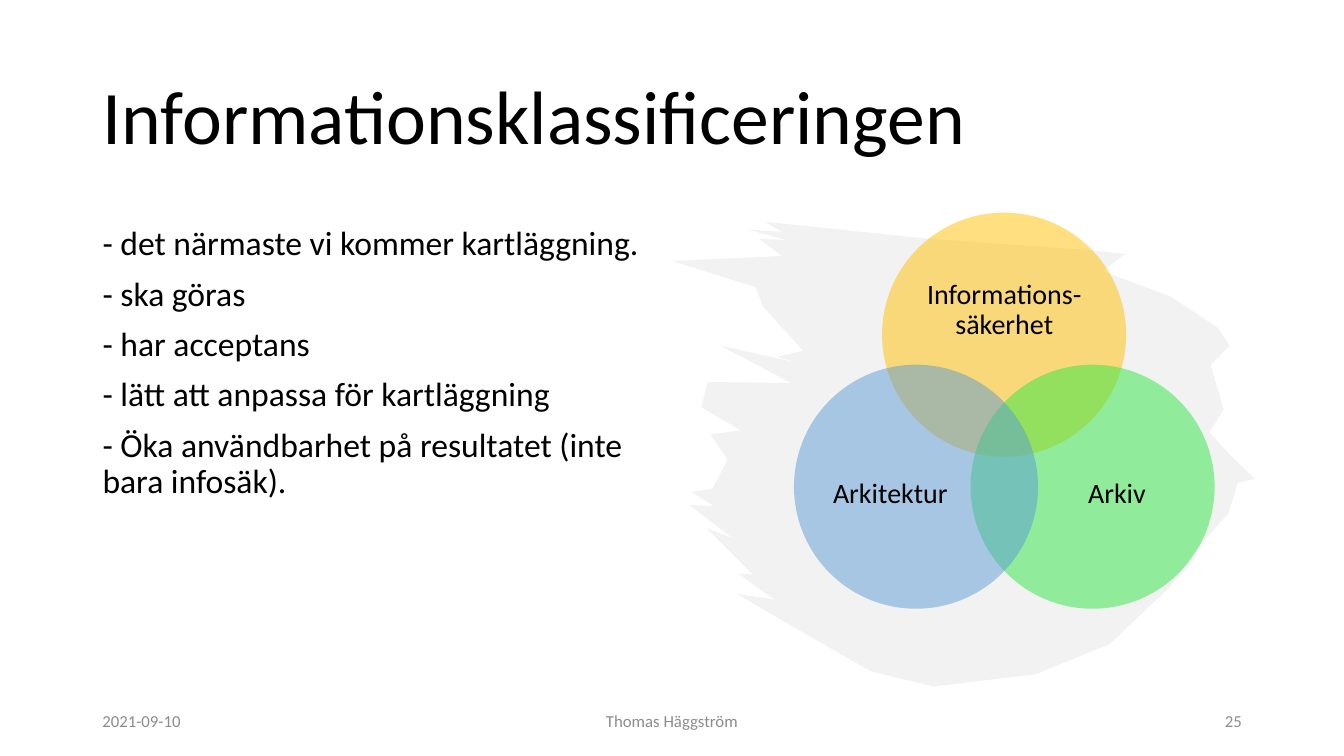
from dataclasses import dataclass

import lxml.etree
import pptx
import pptx.dml.color
import pptx.enum.shapes
import pptx.enum.text
import pptx.oxml.ns
import pptx.shapes.autoshape
import pptx.slide
import pptx.text.text
import pptx.util

Cm = pptx.util.Cm
Pt = pptx.util.Pt
RGBColor = pptx.dml.color.RGBColor
Align = pptx.enum.text.PP_ALIGN
qn = pptx.oxml.ns.qn

FONT = "Calibri"
BLACK = RGBColor(0x00, 0x00, 0x00)
FOOTER_GRAY = RGBColor(0x8C, 0x8C, 0x8C)
BRUSH_GRAY = RGBColor(0xE7, 0xE6, 0xE6)
YELLOW = RGBColor(0xFF, 0xC0, 0x00)
GREEN = RGBColor(0x30, 0xE8, 0x45)
BLUE = RGBColor(0x5B, 0x9B, 0xD5)

MARGIN_LEFT = 2.33
CIRCLE_SIZE = 6.15
FOOTER_TOP, FOOTER_HEIGHT = 17.65, 1.02


@dataclass
class Box:
    """A rectangle in centimetres."""
    left: float
    top: float
    width: float
    height: float

    def lengths(self) -> tuple[int, int, int, int]:
        return Cm(self.left), Cm(self.top), Cm(self.width), Cm(self.height)


@dataclass
class Circle:
    left: float
    top: float
    color: RGBColor
    label: str
    label_box: Box


@dataclass
class Footer:
    text: str
    left: float
    width: float
    alignment: Align


TITLE = "Informationsklassificeringen"
TITLE_BOX = Box(MARGIN_LEFT, 1.19, 29.21, 3.68)
POINTS = (
    "- det närmaste vi kommer kartläggning.",
    "- ska göras",
    "- har acceptans",
    "- lätt att anpassa för kartläggning",
    "- Öka användbarhet på resultatet (inte bara infosäk).",
)
POINTS_BOX = Box(MARGIN_LEFT, 5.59, 14.68, 11.56)

CIRCLES = (
    Circle(22.23, 5.36, YELLOW, "Informations-säkerhet", Box(23.06, 6.43, 4.5, 2.77)),
    Circle(24.46, 9.19, GREEN, "Arkiv", Box(26.31, 10.77, 3.68, 3.38)),
    Circle(20.01, 9.19, BLUE, "Arkitektur", Box(20.6, 10.77, 3.68, 3.38)),
)
FOOTERS = (
    Footer("2021-09-10", MARGIN_LEFT, 7.62, Align.LEFT),
    Footer("Thomas Häggström", 11.22, 11.43, Align.CENTER),
    Footer("25", 23.93, 7.62, Align.RIGHT),
)

# Outline of the brush stroke, clockwise, in hundredths of 2.54 cm
BRUSH_UNIT = Cm(2.54) / 100
BRUSH_OUTLINE = (
    (759, 220), (922, 237), (1080, 248), (1116, 252), (1094, 269), (1161, 294),
    (1208, 325), (1220, 343), (1201, 362), (1214, 406), (1200, 429), (1221, 452),
    (1245, 475), (1228, 479), (1219, 509), (1187, 545), (1161, 582), (1101, 639),
    (1027, 669), (926, 681), (864, 666), (763, 608), (731, 589), (769, 595),
    (732, 569), (747, 570), (701, 524), (727, 534), (684, 501), (708, 502),
    (686, 488), (707, 485), (722, 456), (705, 431), (735, 427), (696, 404),
    (702, 379), (785, 380), (715, 343), (796, 361), (771, 354), (797, 348),
    (757, 304), (750, 285), (667, 259), (776, 254), (753, 237), (780, 238),
    (743, 228), (776, 230),
)


def add_run(paragraph: pptx.text.text._Paragraph, text: str, size: int,
            color: RGBColor = BLACK) -> None:
    run = paragraph.add_run()
    run.text = text
    run.font.name = FONT
    run.font.size = Pt(size)
    run.font.color.rgb = color


def paint(shape: pptx.shapes.autoshape.Shape, color: RGBColor) -> None:
    """Half-transparent fill without line or shadow."""
    shape.shadow.inherit = False
    shape.line.fill.background()
    shape.fill.solid()
    shape.fill.fore_color.rgb = color
    color_element = shape.fill._xPr.find(qn("a:solidFill"))[0]
    lxml.etree.SubElement(color_element, qn("a:alpha")).set("val", "50000")


def place(shape: pptx.shapes.autoshape.Shape, box: Box) -> pptx.text.text.TextFrame:
    shape.left, shape.top, shape.width, shape.height = box.lengths()
    shape.text_frame.auto_size = pptx.enum.text.MSO_AUTO_SIZE.NONE
    shape.text_frame.word_wrap = True
    return shape.text_frame


def add_label(slide: pptx.slide.Slide, box: Box, text: str, size: int, color: RGBColor,
              alignment: Align) -> pptx.text.text.TextFrame:
    frame = place(slide.shapes.add_textbox(*box.lengths()), box)
    frame.vertical_anchor = pptx.enum.text.MSO_ANCHOR.MIDDLE
    frame.paragraphs[0].alignment = alignment
    add_run(frame.paragraphs[0], text, size, color)
    return frame


def fill_title(slide: pptx.slide.Slide) -> None:
    frame = place(slide.shapes.title, TITLE_BOX)
    frame.vertical_anchor = pptx.enum.text.MSO_ANCHOR.MIDDLE
    paragraph = frame.paragraphs[0]
    paragraph.alignment = Align.LEFT
    paragraph.line_spacing = 0.9
    add_run(paragraph, TITLE, 54)


def fill_points(slide: pptx.slide.Slide) -> None:
    frame = place(slide.placeholders[1], POINTS_BOX)
    for index, text in enumerate(POINTS):
        paragraph = frame.add_paragraph() if index else frame.paragraphs[0]
        paragraph.line_spacing = 0.9
        paragraph.space_before = Pt(10)
        properties = paragraph._p.get_or_add_pPr()
        properties.set("marL", "0")
        properties.set("indent", "0")
        lxml.etree.SubElement(properties, qn("a:buNone"))
        add_run(paragraph, text, 24)


def add_brush(slide: pptx.slide.Slide) -> None:
    builder = slide.shapes.build_freeform(*BRUSH_OUTLINE[0], scale=BRUSH_UNIT)
    builder.add_line_segments(BRUSH_OUTLINE[1:], close=True)
    paint(builder.convert_to_shape(), BRUSH_GRAY)


def add_circle(slide: pptx.slide.Slide, circle: Circle) -> None:
    box = Box(circle.left, circle.top, CIRCLE_SIZE, CIRCLE_SIZE)
    oval = pptx.enum.shapes.MSO_SHAPE.OVAL
    paint(slide.shapes.add_shape(oval, *box.lengths()), circle.color)
    frame = add_label(slide, circle.label_box, circle.label, 20, BLACK, Align.CENTER)
    frame.margin_left = frame.margin_top = frame.margin_right = frame.margin_bottom = 0
    frame.paragraphs[0].line_spacing = 0.9


def main() -> None:
    presentation = pptx.Presentation()
    presentation.slide_width, presentation.slide_height = Cm(33.87), Cm(19.05)
    slide = presentation.slides.add_slide(presentation.slide_layouts[1])

    # Title and list
    fill_title(slide)
    fill_points(slide)

    # Brush stroke and footer
    add_brush(slide)
    for footer in FOOTERS:
        box = Box(footer.left, FOOTER_TOP, footer.width, FOOTER_HEIGHT)
        add_label(slide, box, footer.text, 12, FOOTER_GRAY, footer.alignment)

    # Venn diagram
    for circle in CIRCLES:
        add_circle(slide, circle)

    presentation.save("out.pptx")


if __name__ == "__main__":
    main()
